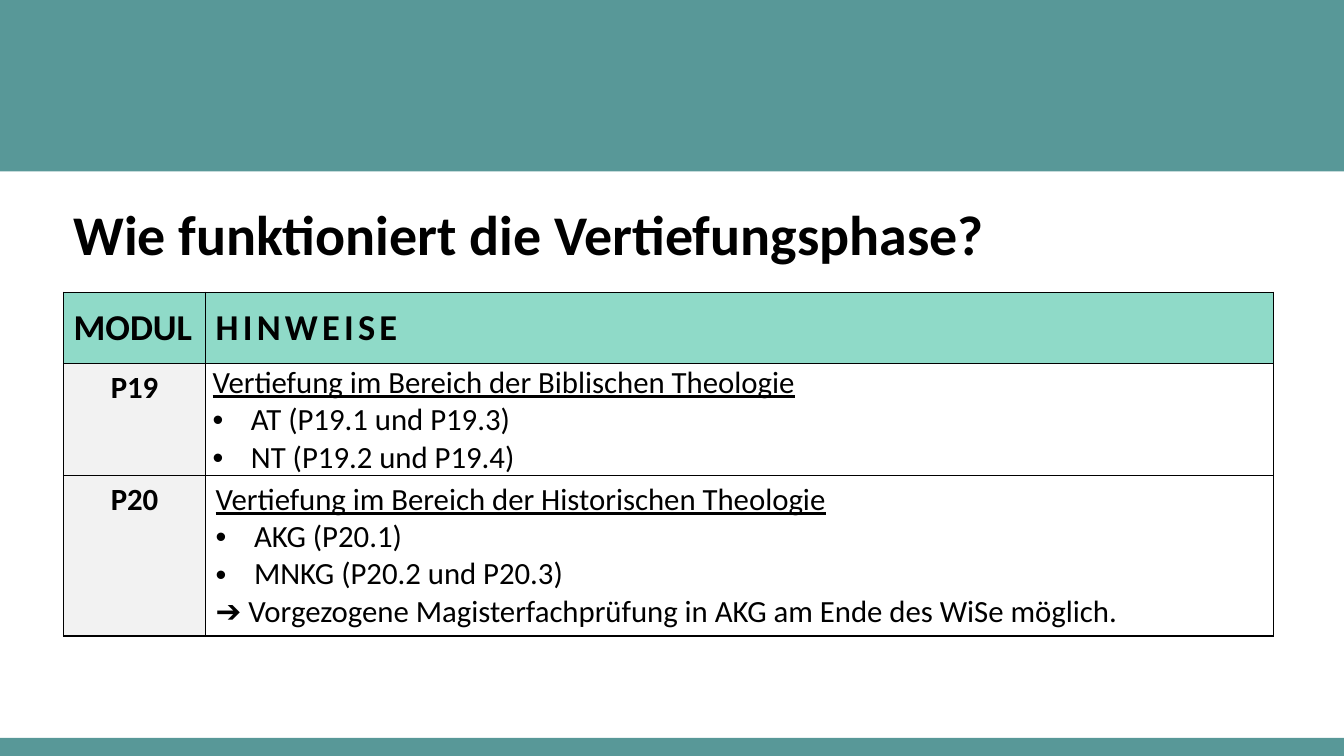
from dataclasses import dataclass

from lxml import etree
from pptx import Presentation
from pptx.dml.color import RGBColor
from pptx.enum.shapes import MSO_SHAPE
from pptx.enum.text import MSO_ANCHOR, PP_ALIGN
from pptx.oxml.ns import qn
from pptx.util import Inches, Pt

RECTANGLE = MSO_SHAPE.RECTANGLE
MIDDLE = MSO_ANCHOR.MIDDLE
TOP = MSO_ANCHOR.TOP
CENTER = PP_ALIGN.CENTER
LEFT = PP_ALIGN.LEFT

PAGE_WIDTH, PAGE_HEIGHT = 13.33, 7.5
MARGIN = 0.63
CONTENT_WIDTH = 12
COLUMNS = (1.41, 10.59)
ROWS = (0.71, 1.11, 1.59)
BULLET_INDENT = 0.38


@dataclass(frozen=True)
class Theme:
    font: str = "Calibri"
    band: str = "589898"
    header: str = "8FDAC8"
    module: str = "F2F2F2"
    plain: str = "FFFFFF"
    ink: str = "000000"
    title_size: int = 40
    header_size: int = 26
    body_size: int = 22
    border_width: int = 1


THEME = Theme()
TITLE = {"size": Pt(THEME.title_size), "bold": True}
HEADING = {"size": Pt(THEME.header_size), "bold": True}
MODULE = {"size": Pt(THEME.body_size), "bold": True}
BODY = {"size": Pt(THEME.body_size), "bold": False}
TOPIC = {**BODY, "underline": True}

HINTS = (
    ("P19", 0, (
        ("Vertiefung im Bereich der Biblischen Theologie", TOPIC, False),
        ("AT (P19.1 und P19.3)", BODY, True),
        ("NT (P19.2 und P19.4)", BODY, True),
    )),
    ("P20", 0.05, (
        ("Vertiefung im Bereich der Historischen Theologie", TOPIC, False),
        ("AKG (P20.1)", BODY, True),
        ("MNKG (P20.2 und P20.3)", BODY, True),
        ("➔ Vorgezogene Magisterfachprüfung in AKG am Ende des WiSe möglich.", BODY, False),
    )),
)


def add_bullet(para):
    properties = para._p.get_or_add_pPr()
    properties.set("marL", str(Inches(BULLET_INDENT)))
    properties.set("indent", str(-Inches(BULLET_INDENT)))
    etree.SubElement(properties, qn("a:buFont")).set("typeface", "Arial")
    etree.SubElement(properties, qn("a:buChar")).set("char", "•")


def write_span(para, text, formats):
    span = para.add_run()
    span.text = text
    span.font.name = THEME.font
    span.font.color.rgb = RGBColor.from_string(THEME.ink)
    for name, value in formats.items():
        setattr(span.font, name, value)
    return span


def add_band(page, top, height):
    band = page.shapes.add_shape(
        RECTANGLE, 0, Inches(top), Inches(PAGE_WIDTH), Inches(height))
    band.shadow.inherit = False
    band.fill.solid()
    band.fill.fore_color.rgb = RGBColor.from_string(THEME.band)
    band.line.fill.background()


def add_title(page, text):
    box = page.shapes.add_textbox(
        Inches(MARGIN), Inches(1.87), Inches(CONTENT_WIDTH), Inches(0.88))
    box.text_frame.word_wrap = True
    box.text_frame.vertical_anchor = MIDDLE
    write_span(box.text_frame.paragraphs[0], text, TITLE)


def add_borders(cell):
    properties = cell._tc.get_or_add_tcPr()
    for position, side in enumerate(("lnL", "lnR", "lnT", "lnB")):
        line = etree.Element(qn(f"a:{side}"), w=str(Pt(THEME.border_width)))
        fill = etree.SubElement(line, qn("a:solidFill"))
        etree.SubElement(fill, qn("a:srgbClr")).set("val", THEME.ink)
        properties.insert(position, line)


def fill_cell(cell, color, lines, anchor=TOP, align=LEFT, side=0.1, inset=0.05):
    formats = {
        "vertical_anchor": anchor,
        "margin_left": Inches(side),
        "margin_right": Inches(side),
        "margin_top": Inches(inset),
        "margin_bottom": Inches(inset),
    }
    for name, value in formats.items():
        setattr(cell, name, value)
    cell.fill.solid()
    cell.fill.fore_color.rgb = RGBColor.from_string(color)
    add_borders(cell)
    frame = cell.text_frame
    for index, (text, font_formats, bulleted) in enumerate(lines):
        para = frame.add_paragraph() if index else frame.paragraphs[0]
        para.alignment = align
        if bulleted:
            add_bullet(para)
        span = write_span(para, text, font_formats)
    return span


def add_hint_table(page):
    table = page.shapes.add_table(
        len(ROWS), len(COLUMNS), Inches(MARGIN), Inches(2.9),
        Inches(sum(COLUMNS)), Inches(sum(ROWS))).table
    for column, width in zip(table.columns, COLUMNS):
        column.width = Inches(width)
    for row, height in zip(table.rows, ROWS):
        row.height = Inches(height)
    for column, heading in enumerate(("MODUL", "HINWEISE")):
        span = fill_cell(table.cell(0, column), THEME.header,
                         [(heading, HEADING, False)], anchor=MIDDLE)
    span.font._element.set("spc", "300")
    for row, (module, inset, lines) in enumerate(HINTS, start=1):
        fill_cell(table.cell(row, 0), THEME.module,
                  [(module, MODULE, False)], align=CENTER)
        fill_cell(table.cell(row, 1), THEME.plain, lines,
                  side=0.1 if inset else 0.07, inset=inset)


def main():
    deck = Presentation()
    deck.slide_width = Inches(PAGE_WIDTH)
    deck.slide_height = Inches(PAGE_HEIGHT)
    page = deck.slides.add_slide(deck.slide_layouts[6])
    add_band(page, 0, 1.7)
    add_band(page, 7.32, 0.18)
    add_title(page, "Wie funktioniert die Vertiefungsphase?")
    add_hint_table(page)
    deck.save("out.pptx")


if __name__ == "__main__":
    main()
